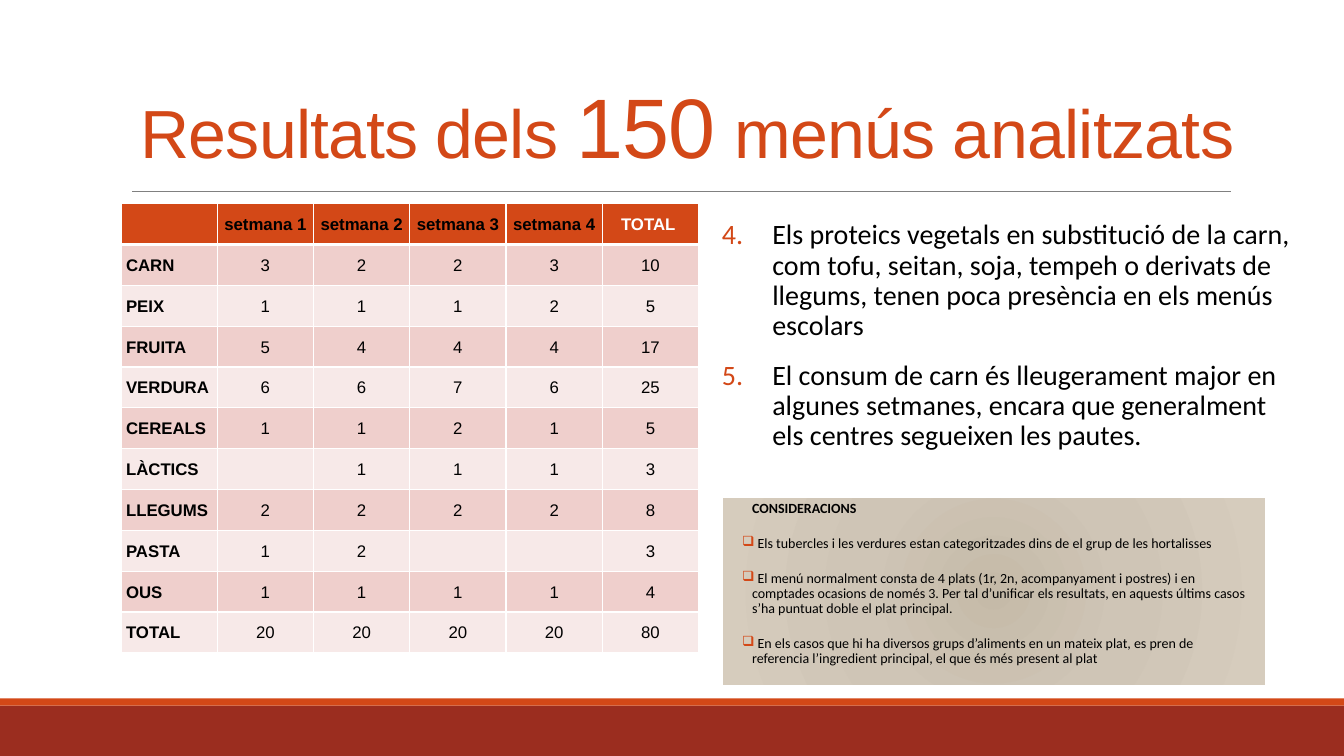
from dataclasses import dataclass

from lxml import etree
from pptx import Presentation
from pptx import util as u
from pptx.dml.color import RGBColor
from pptx.enum import shapes, text
from pptx.oxml import ns

TITLE = [("Resultats dels ", False), ("150", True), (" menús analitzats", False)]
WEEKLY_SERVINGS = [
    ("", "setmana 1", "setmana 2", "setmana 3", "setmana 4", "TOTAL "),
    ("CARN", 3, 2, 2, 3, 10),
    ("PEIX", 1, 1, 1, 2, 5),
    ("FRUITA", 5, 4, 4, 4, 17),
    ("VERDURA", 6, 6, 7, 6, 25),
    ("CEREALS", 1, 1, 2, 1, 5),
    ("LÀCTICS", "", 1, 1, 1, 3),
    ("LLEGUMS", 2, 2, 2, 2, 8),
    ("PASTA", 1, 2, "", "", 3),
    ("OUS", 1, 1, 1, 1, 4),
    ("TOTAL", 20, 20, 20, 20, 80),
]
FIRST_FINDING = 4
FINDINGS = [
    "Els proteics vegetals en substitució de la carn, com tofu, seitan, soja, tempeh o "
    "derivats de llegums, tenen poca presència en els menús escolars",
    "El consum de carn és lleugerament major en algunes setmanes, encara que generalment "
    "els centres segueixen les pautes.",
]
REMARKS_HEADING = "CONSIDERACIONS"
REMARKS = [
    " Els tubercles i les verdures estan categoritzades dins de el grup de les hortalisses",
    " El menú normalment consta de 4 plats (1r, 2n, acompanyament i postres) i en comptades "
    "ocasions de només 3. Per tal d’unificar els resultats, en aquests últims casos s’ha "
    "puntuat doble el plat principal.",
    " En els casos que hi ha diversos grups d’aliments en un mateix plat, es pren de "
    "referencia l’ingredient principal, el que és més present al plat",
]


@dataclass(frozen=True)
class Theme:
    accent: str = "D34817"
    band: str = "9B2D1F"
    rule: str = "808080"
    ink: str = "000000"
    paper: str = "FFFFFF"
    odd_row: str = "EFCFCC"
    even_row: str = "F7E9E8"
    panel_stops: tuple = ((0, "C5BAA8"), (45, "CFC5B6"), (100, "D6CCBD"))
    heading_font: str = "Arial"
    body_font: str = "Calibri"
    title_size: float = 48.6
    figure_size: float = 60.3
    finding_size: float = 20
    table_size: float = 12
    remark_size: float = 10


THEME = Theme()
WIDTH, HEIGHT = 13.33, 7.5
BAND_TOP, STRIPE = 7.0, 0.07
RULE_LEFT, RULE_RIGHT, RULE_Y = 1.31, 12.21, 1.9
TABLE_LEFT, TABLE_TOP, TABLE_WIDTH, TABLE_HEIGHT = 1.2, 2.02, 5.73, 4.46
RIGHT_LEFT = 7.16


def inches(*lengths):
    return [u.Inches(length) for length in lengths]


def rgb(value):
    return RGBColor.from_string(value)


def child(parent, tag, **attributes):
    node = etree.SubElement(parent, ns.qn(tag))
    for name, value in attributes.items():
        node.set(name, str(value))
    return node


def add_run(paragraph, words, size, face, color=THEME.ink, bold=False):
    run = paragraph.add_run()
    run.text = words
    font = run.font
    font.size, font.name, font.bold = u.Pt(size), face, bold
    font.color.rgb = rgb(color)
    return run


def set_frame(frame, margins, anchor=text.MSO_ANCHOR.TOP):
    frame.word_wrap = True
    frame.auto_size = text.MSO_AUTO_SIZE.NONE
    frame.vertical_anchor = anchor
    (frame.margin_left, frame.margin_top,
     frame.margin_right, frame.margin_bottom) = inches(*margins)


def list_paragraph(frame, index, hang, bullet=None, **bullet_attributes):
    """Return a paragraph with a hanging indent and, if given, an accent bullet."""
    paragraph = frame.add_paragraph() if index else frame.paragraphs[0]
    paragraph.line_spacing = 0.9
    paragraph.space_after = u.Pt(2)
    if index:
        paragraph.space_before = u.Pt(12)
    properties = paragraph._p.get_or_add_pPr()
    properties.set("marL", str(u.Inches(hang)))
    properties.set("indent", str(-u.Inches(hang) if bullet else 0))
    if bullet:
        child(child(properties, "a:buClr"), "a:srgbClr", val=THEME.accent)
        child(properties, bullet, **bullet_attributes)
    else:
        child(properties, "a:buNone")
    paragraph.alignment = text.PP_ALIGN.LEFT
    return paragraph


def add_rectangle(slide, box, color=None):
    rectangle = slide.shapes.add_shape(shapes.MSO_SHAPE.RECTANGLE, *inches(*box))
    rectangle.shadow.inherit = False
    rectangle.line.fill.background()
    if color:
        rectangle.fill.solid()
        rectangle.fill.fore_color.rgb = rgb(color)
    return rectangle


def add_frame_lines(slide):
    add_rectangle(slide, (0, BAND_TOP, WIDTH, HEIGHT - BAND_TOP), THEME.band)
    add_rectangle(slide, (0, BAND_TOP - STRIPE, WIDTH, STRIPE), THEME.accent)
    rule = slide.shapes.add_connector(
        shapes.MSO_CONNECTOR.STRAIGHT, *inches(RULE_LEFT, RULE_Y, RULE_RIGHT, RULE_Y))
    rule.line.color.rgb = rgb(THEME.rule)
    rule.line.width = u.Pt(0.5)
    child(rule._element.spPr, "a:effectLst")


def fill_title(title):
    title.left, title.top, title.width, title.height = inches(0.94, 0.2, 11.75, 1.59)
    set_frame(title.text_frame, (0.1, 0.05, 0.1, 0.05), text.MSO_ANCHOR.BOTTOM)
    paragraph = title.text_frame.paragraphs[0]
    paragraph.alignment = text.PP_ALIGN.CENTER
    paragraph.line_spacing = 0.85
    for words, is_figure in TITLE:
        size = THEME.figure_size if is_figure else THEME.title_size
        run = add_run(paragraph, words, size, THEME.heading_font, THEME.accent)
        run.font._element.set("spc", "-50")


def set_borders(cell, bottom):
    properties = cell._tc.get_or_add_tcPr()
    for side, points in (("L", 1), ("R", 1), ("T", 1), ("B", bottom)):
        border = child(properties, f"a:ln{side}", w=u.Pt(points))
        child(child(border, "a:solidFill"), "a:srgbClr", val=THEME.paper)


def add_servings_table(slide):
    rows, columns = len(WEEKLY_SERVINGS), len(WEEKLY_SERVINGS[0])
    table = slide.shapes.add_table(rows, columns, *inches(
        TABLE_LEFT, TABLE_TOP, TABLE_WIDTH, TABLE_HEIGHT)).table
    table.horz_banding = False
    for r, servings in enumerate(WEEKLY_SERVINGS):
        row_fill = THEME.odd_row if r % 2 else THEME.even_row
        for c, value in enumerate(servings):
            cell = table.cell(r, c)
            set_borders(cell, bottom=1 if r else 3)
            cell.fill.solid()
            cell.fill.fore_color.rgb = rgb(row_fill if r else THEME.accent)
            cell.vertical_anchor = text.MSO_ANCHOR.MIDDLE
            cell.margin_left = cell.margin_right = u.Inches(0.05)
            cell.margin_top = cell.margin_bottom = 0
            paragraph = cell.text_frame.paragraphs[0]
            paragraph.alignment = text.PP_ALIGN.CENTER if c else text.PP_ALIGN.LEFT
            paragraph.line_spacing = 1.07
            paragraph.space_after = u.Pt(8)
            paragraph.font.size = u.Pt(THEME.table_size)
            if value != "":
                is_total_heading = r == 0 and c == columns - 1
                add_run(paragraph, str(value), THEME.table_size, THEME.heading_font,
                        THEME.paper if is_total_heading else THEME.ink, r == 0 or c == 0)


def add_findings(slide):
    frame = slide.shapes.add_textbox(*inches(RIGHT_LEFT, 2.14, 5.73, 3.01)).text_frame
    set_frame(frame, (0, 0.05, 0, 0.05))
    for i, finding in enumerate(FINDINGS):
        paragraph = list_paragraph(frame, i, 0.5, "a:buAutoNum",
                                   type="arabicPeriod", startAt=FIRST_FINDING)
        add_run(paragraph, finding, THEME.finding_size, THEME.body_font)


def add_remarks_panel(slide):
    panel = add_rectangle(slide, (RIGHT_LEFT, 4.93, 5.39, 1.87))
    gradient = etree.Element(ns.qn("a:gradFill"), rotWithShape="1")
    stops = child(gradient, "a:gsLst")
    for share, color in THEME.panel_stops:
        child(child(stops, "a:gs", pos=share * 1000), "a:srgbClr", val=color)
    center = dict.fromkeys("ltrb", 100000)
    child(child(gradient, "a:path", path="circle"), "a:fillToRect", **center)
    panel._element.spPr.find(ns.qn("a:prstGeom")).addnext(gradient)
    panel.line.color.rgb = rgb(THEME.paper)
    panel.line.width = u.Pt(1)
    frame = panel.text_frame
    set_frame(frame, (0.2, 0.05, 0.2, 0.05))
    add_run(list_paragraph(frame, 0, 0.1), REMARKS_HEADING,
            THEME.remark_size, THEME.body_font, bold=True)
    for i, remark in enumerate(REMARKS, start=1):
        paragraph = list_paragraph(frame, i, 0.1, "a:buChar", char="❑")
        add_run(paragraph, remark, THEME.remark_size, THEME.body_font)


def main():
    deck = Presentation()
    deck.slide_width, deck.slide_height = inches(WIDTH, HEIGHT)
    slide = deck.slides.add_slide(deck.slide_layouts[5])
    add_frame_lines(slide)
    add_findings(slide)
    add_servings_table(slide)
    fill_title(slide.shapes.title)
    add_remarks_panel(slide)
    deck.save("out.pptx")


if __name__ == "__main__":
    main()
